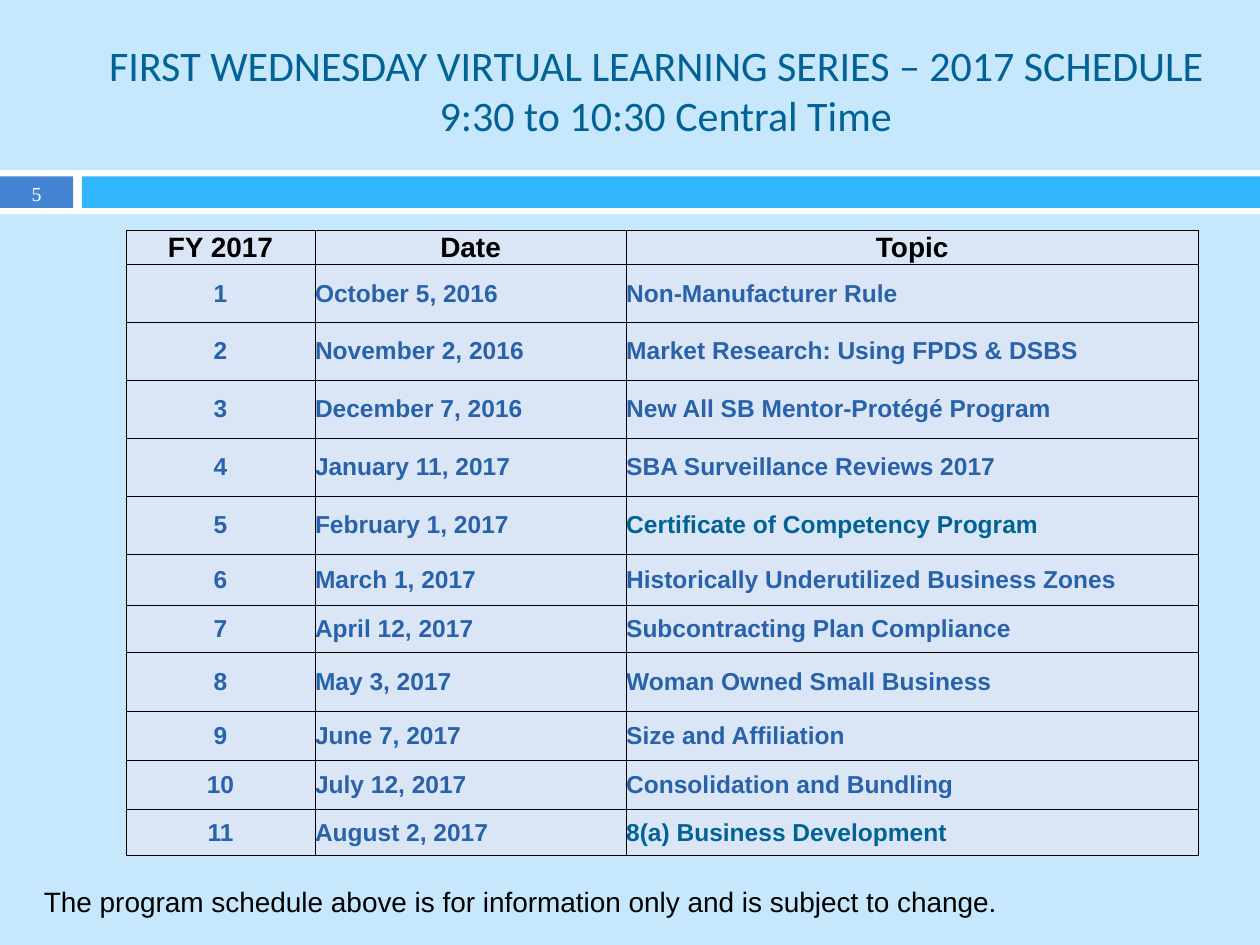
from lxml import etree
from pptx import Presentation
from pptx.dml.color import RGBColor
from pptx.enum.shapes import MSO_SHAPE
from pptx.enum.text import MSO_ANCHOR, PP_ALIGN
from pptx.oxml.ns import qn
from pptx.util import Inches, Pt

RECTANGLE = MSO_SHAPE.RECTANGLE
MIDDLE = MSO_ANCHOR.MIDDLE
LEFT = PP_ALIGN.LEFT
CENTER = PP_ALIGN.CENTER

TITLE_LINES = [
    "FIRST WEDNESDAY VIRTUAL LEARNING SERIES – 2017 SCHEDULE",
    "9:30 to 10:30 Central Time",
]
SECOND_LINE_INDENT = 0.15
HEADINGS = ("FY 2017", "Date", "Topic")
SESSIONS = [
    ("October 5, 2016", "Non-Manufacturer Rule"),
    ("November 2, 2016", "Market Research: Using FPDS & DSBS"),
    ("December 7, 2016", "New All SB Mentor-Protégé Program"),
    ("January 11, 2017", "SBA Surveillance Reviews 2017"),
    ("February 1, 2017", "Certificate of Competency Program"),
    ("March 1, 2017", "Historically Underutilized Business Zones"),
    ("April 12, 2017", "Subcontracting Plan Compliance"),
    ("May 3, 2017", "Woman Owned Small Business"),
    ("June 7, 2017", "Size and Affiliation"),
    ("July 12, 2017", "Consolidation and Bundling"),
    ("August 2, 2017", "8(a) Business Development"),
]
HIGHLIGHTED_TOPICS = {"Certificate of Competency Program", "8(a) Business Development"}
COLUMN_WIDTHS = [1.5, 2.47, 4.54]
ROW_HEIGHTS = [0.27] + [0.46] * 5 + [0.41, 0.37, 0.47, 0.39, 0.39, 0.36]


def color(value):
    return RGBColor.from_string(value)


class SlideBuilder:
    background = "C6E7FC"
    white = "FFFFFF"
    black = "000000"
    badge = "4584D3"
    band = "31B6FD"
    accent = "016296"
    cell_fill = "DAE6F6"
    cell_text = "2862AA"
    body_font = "Arial"
    title_font = "Calibri"
    number_font = "Times New Roman"

    def __init__(self, slide):
        self.slide = slide
        slide.background.fill.solid()
        slide.background.fill.fore_color.rgb = color(self.background)

    def format(self, paragraph, font, size, text_color, align=LEFT, bold=False):
        paragraph.alignment = align
        paragraph.font.name = font
        paragraph.font.size = Pt(size)
        paragraph.font.bold = bold
        paragraph.font.color.rgb = color(text_color)

    def rectangle(self, left, top, width, height, fill):
        shape = self.slide.shapes.add_shape(
            RECTANGLE, Inches(left), Inches(top), Inches(width), Inches(height))
        shape.shadow.inherit = False
        shape.fill.solid()
        shape.fill.fore_color.rgb = color(fill)
        shape.line.fill.background()

    def text(self, left, top, width, height, text, wrap=False, **style):
        shape = self.slide.shapes.add_textbox(
            Inches(left), Inches(top), Inches(width), Inches(height))
        frame = shape.text_frame
        frame.word_wrap = wrap
        frame.vertical_anchor = MIDDLE
        frame.text = text
        self.format(frame.paragraphs[0], **style)

    def title(self, left, top, width, height, lines):
        shape = self.slide.shapes.title
        shape.left, shape.top = Inches(left), Inches(top)
        shape.width, shape.height = Inches(width), Inches(height)
        frame = shape.text_frame
        frame.word_wrap = True
        frame.vertical_anchor = MIDDLE
        frame.text = "\n".join(lines)
        for paragraph in frame.paragraphs:
            self.format(paragraph, self.title_font, 24, self.accent, CENTER)
        properties = frame.paragraphs[1]._p.get_or_add_pPr()
        properties.set("marL", str(Inches(SECOND_LINE_INDENT)))
        properties.set("indent", "0")

    def borders(self, cell):
        properties = cell._tc.get_or_add_tcPr()
        for side in ("lnL", "lnR", "lnT", "lnB"):
            line = etree.SubElement(properties, qn("a:" + side), w=str(Pt(0.5)))
            fill = etree.SubElement(line, qn("a:solidFill"))
            etree.SubElement(fill, qn("a:srgbClr"), val=self.black)

    def cell(self, cell, text, size, text_color, align):
        self.borders(cell)
        cell.fill.solid()
        cell.fill.fore_color.rgb = color(self.cell_fill)
        cell.margin_left = cell.margin_right = 0
        cell.margin_top = cell.margin_bottom = 0
        cell.vertical_anchor = MIDDLE
        cell.text = text
        paragraph = cell.text_frame.paragraphs[0]
        self.format(paragraph, self.body_font, size, text_color, align, True)

    def schedule(self, left, top, headings, sessions):
        table = self.slide.shapes.add_table(
            len(ROW_HEIGHTS), len(COLUMN_WIDTHS), Inches(left), Inches(top),
            Inches(sum(COLUMN_WIDTHS)), Inches(sum(ROW_HEIGHTS))).table
        table.horz_banding = False
        for column, width in zip(table.columns, COLUMN_WIDTHS):
            column.width = Inches(width)
        for row, height in zip(table.rows, ROW_HEIGHTS):
            row.height = Inches(height)
        for index, heading in enumerate(headings):
            self.cell(table.cell(0, index), heading, 16, self.black, CENTER)
        for number, session in enumerate(sessions, 1):
            for index, text in enumerate((str(number), *session)):
                text_color = self.accent if text in HIGHLIGHTED_TOPICS else self.cell_text
                align = LEFT if index else CENTER
                self.cell(table.cell(number, index), text, 14, text_color, align)


def main():
    presentation = Presentation()
    presentation.slide_width = Inches(10)
    presentation.slide_height = Inches(7.5)
    builder = SlideBuilder(presentation.slides.add_slide(presentation.slide_layouts[5]))
    builder.rectangle(0, 1.35, 10, 0.35, builder.white)
    builder.rectangle(0, 1.4, 0.58, 0.25, builder.badge)
    builder.rectangle(0.65, 1.4, 9.35, 0.25, builder.band)
    builder.text(0, 1.4, 0.58, 0.27, "5", wrap=True, font=builder.number_font,
                 size=11.4, text_color=builder.white, align=CENTER)
    builder.text(0.25, 6.97, 7.92, 0.37,
                 "The program schedule above is for information only and is subject to change.",
                 font=builder.body_font, size=16, text_color=builder.black)
    builder.schedule(1, 1.83, HEADINGS, SESSIONS)
    builder.title(0.67, 0.17, 9.08, 1.08, TITLE_LINES)
    presentation.save("out.pptx")


if __name__ == "__main__":
    main()
